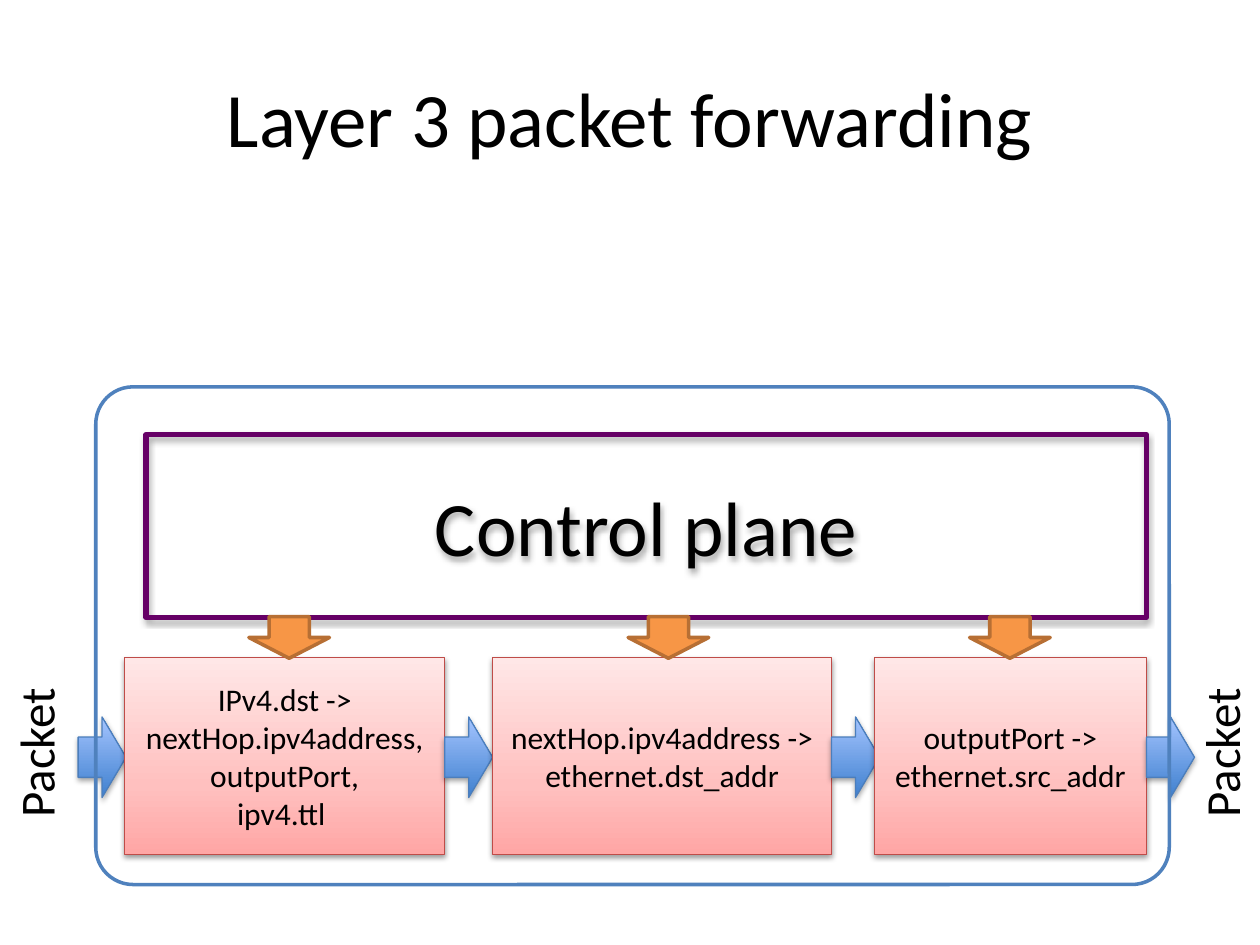
from lxml.etree import SubElement
from pptx import Presentation
from pptx.dml.color import RGBColor
from pptx.enum.shapes import MSO_SHAPE as Shape
from pptx.enum.text import MSO_ANCHOR as Anchor, MSO_AUTO_SIZE as AutoSize, PP_ALIGN as Align
from pptx.oxml.ns import qn
from pptx.util import Inches, Pt

COLORS = {
    "ink": "000000", "stage_line": "BF4C48", "flow_line": "4B7EBC",
    "frame": "4F81BD", "control": "660066", "push": "F79646", "push_line": "B76F34",
}
STAGE_FILL = [(0, "FFA6A5"), (35, "FFC0BF"), (100, "FFE7E7")]
FLOW_FILL = [(0, "3F80CE"), (100, "A4C4FF")]
COLUMNS, ROWS = 100, 75
STAGES = [
    (9.9, 25.4, 22.95, ["IPv4.dst ->", "nextHop.ipv4address,", "outputPort,", "ipv4.ttl "]),
    (39.1, 26.9, 53.05, ["nextHop.ipv4address ->", "ethernet.dst_addr"]),
    (69.4, 21.6, 80.15, ["outputPort ->", "ethernet.src_addr"]),
]


def rgb(name):
    """Return the palette colour called name."""
    return RGBColor.from_string(COLORS[name])


def write(frame, lines, size=18, color="ink", align=Align.CENTER, anchor=Anchor.MIDDLE, wrap=True):
    """Fill a text frame with one paragraph per line."""
    frame.word_wrap = wrap
    frame.vertical_anchor = anchor
    for index, line in enumerate(lines):
        paragraph = frame.add_paragraph() if index else frame.paragraphs[0]
        paragraph.alignment = align
        run = paragraph.add_run()
        run.text = line
        run.font.name = "Calibri"
        run.font.size = Pt(size)
        run.font.color.rgb = rgb(color)


class ForwardingSlide:
    """Draw pipeline elements on a slide measured in grid columns and rows."""

    def __init__(self, deck):
        """Add a title-only slide to the deck."""
        self.slide = deck.slides.add_slide(deck.slide_layouts[5])
        self.column = deck.slide_width / COLUMNS
        self.row = deck.slide_height / ROWS

    def place(self, left, top, width, height):
        """Turn grid units into lengths."""
        return (round(left * self.column), round(top * self.row),
                round(width * self.column), round(height * self.row))

    def title(self, text, *cells):
        """Move and fill the title placeholder."""
        heading = self.slide.shapes.title
        heading.left, heading.top, heading.width, heading.height = self.place(*cells)
        write(heading.text_frame, [text], size=44)

    def block(self, preset, cells, line, weight, fill=None):
        """Add a preset shape with a plain fill or none."""
        block = self.slide.shapes.add_shape(preset, *self.place(*cells))
        block.shadow.inherit = False
        block.line.color.rgb = rgb(line)
        block.line.width = Pt(weight)
        if fill:
            block.fill.solid()
            block.fill.fore_color.rgb = rgb(fill)
        else:
            block.fill.background()
        return block

    def gradient(self, block, stops):
        """Fill a block with stops running from bottom to top."""
        block.fill.gradient()
        block.fill.gradient_angle = 90
        stop_list = block._element.spPr.find(".//" + qn("a:gsLst"))
        for old_stop in list(stop_list):
            stop_list.remove(old_stop)
        for percent, color in stops:
            stop = SubElement(stop_list, qn("a:gs"), pos=str(percent * 1000))
            SubElement(stop, qn("a:srgbClr"), val=color)

    def shade(self, block, opacity=35, distance=1.8):
        """Cast a soft shadow straight down."""
        effects = block._element.spPr.find(qn("a:effectLst"))
        shadow = SubElement(effects, qn("a:outerShdw"), blurRad=str(Pt(3.1)),
                            dist=str(Pt(distance)), dir="5400000", rotWithShape="0")
        color = SubElement(shadow, qn("a:srgbClr"), val=COLORS["ink"])
        SubElement(color, qn("a:alpha"), val=str(opacity * 1000))

    def stage(self, left, width, lines):
        """Add one match-action table of the pipeline."""
        table = self.block(Shape.RECTANGLE, (left, 52.2, width, 15.6), "stage_line", 0.75)
        self.gradient(table, STAGE_FILL)
        self.shade(table, opacity=38, distance=1.6)
        write(table.text_frame, lines)

    def flow(self, left):
        """Add an arrow that carries the packet onward."""
        arrow = self.block(Shape.RIGHT_ARROW, (left, 56.9, 3.8, 6.4), "flow_line", 0.75)
        self.gradient(arrow, FLOW_FILL)
        self.shade(arrow)

    def push(self, center):
        """Add an arrow from the control plane down to a stage."""
        arrow = self.block(Shape.RIGHT_ARROW, (center - 1.65, 47.4, 3.3, 6.4), "push_line", 2, "push")
        arrow.rotation = 90

    def side_label(self, text, left):
        """Add a label that reads upward."""
        label = self.slide.shapes.add_textbox(*self.place(left, 56.7, 12.6, 5.7))
        label.rotation = 270
        write(label.text_frame, [text], size=28, align=Align.LEFT, anchor=Anchor.TOP, wrap=False)
        label.text_frame.auto_size = AutoSize.SHAPE_TO_FIT_TEXT

    def router(self):
        """Add the rounded frame around the whole device."""
        frame = self.block(Shape.ROUNDED_RECTANGLE, (7.6, 30.7, 85.2, 39.5), "frame", 2)
        frame.adjustments[0] = 0.075

    def control_plane(self, text):
        """Add the outlined control plane above the stages."""
        plane = self.block(Shape.RECTANGLE, (11.6, 34.5, 79.4, 14.5), "control", 3)
        self.shade(plane)
        write(plane.text_frame, [text], size=44)


def main():
    """Build and save the slide."""
    deck = Presentation()
    deck.slide_width, deck.slide_height = Inches(10), Inches(7.5)
    page = ForwardingSlide(deck)
    page.title("Layer 3 packet forwarding", 2.5, 3, 95, 12.5)
    page.flow(6.2)
    for left, width, _, lines in STAGES:
        page.stage(left, width, lines)
        page.flow(left + width)
        if left + width + 3.8 > 69.4 and left < 69.4:
            continue
    for left in (-3.5, 90.6):
        page.side_label("Packet", left)
    page.router()
    page.control_plane("Control plane")
    for _, _, center, _ in STAGES:
        page.push(center)
    deck.save("out.pptx")


if __name__ == "__main__":
    main()
